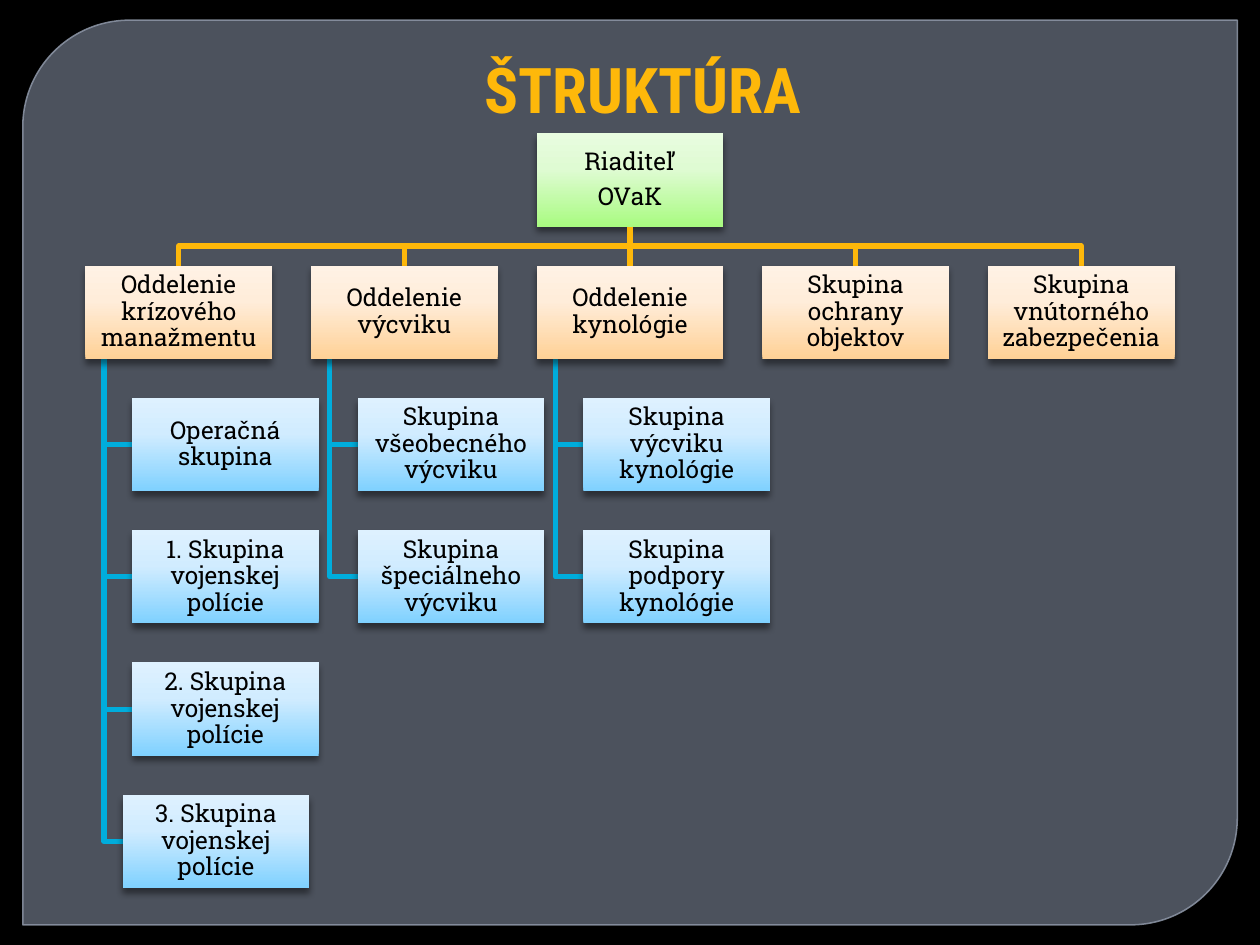
from dataclasses import dataclass

from pptx import Presentation
from pptx.dml.color import RGBColor as RGB
from pptx.enum.shapes import MSO_CONNECTOR as CONN, MSO_SHAPE as SHAPE
from pptx.enum.text import MSO_ANCHOR as ANCHOR, MSO_AUTO_SIZE as FIT, PP_ALIGN as ALIGN
from pptx.oxml import parse_xml as to_xml
from pptx.oxml.ns import nsdecls, qn
from pptx.util import Pt


@dataclass(frozen=True)
class Theme:
    back: str = "000000"
    panel: str = "767F8F"
    edge: str = "8B94A4"
    gold: str = "FEB80A"
    blue: str = "00ADDC"
    ink: str = "000000"
    green_fade: tuple = ("A9FB81", "DFFBD3", "E8FCDF")
    sand_fade: tuple = ("FFD196", "FFEDDA", "FFF2E5")
    sky_fade: tuple = ("7FD1FF", "D1ECFF", "DEF1FF")
    head_font: str = "Roboto Condensed"
    body_font: str = "Roboto Slab"
    head_size: int = 36
    body_size: int = 14


T = Theme()

BOX_W, BOX_H = 106.6, 53.3
STEP_X, STEP_Y = 128.95, 75.6
MID_X, TOP = 360, 76.2
SPINE = BOX_W / 10
INDENT = BOX_W / 4
LAST_INDENT = BOX_W / 5    # the fourth group sits a little further left

ROOT = ["Riaditeľ", "OVaK"]
UNITS = [
    ("Oddelenie krízového manažmentu",
     ["Operačná skupina", "1. Skupina vojenskej polície",
      "2. Skupina vojenskej polície", "3. Skupina vojenskej polície"]),
    ("Oddelenie výcviku",
     ["Skupina všeobecného výcviku", "Skupina špeciálneho výcviku"]),
    ("Oddelenie kynológie",
     ["Skupina výcviku kynológie", "Skupina podpory kynológie"]),
    ("Skupina ochrany objektov", []),
    ("Skupina vnútorného zabezpečenia", []),
]


def col_x(col):
    return MID_X + (col - 2) * STEP_X - BOX_W / 2


def row_y(row):
    return TOP + row * STEP_Y


def indent(row):
    return LAST_INDENT if row == 5 else INDENT


def set_alpha(fill, pct):
    """Make a solid fill partly see-through."""
    color = fill._xPr.find(qn("a:solidFill"))[0]
    color.append(to_xml(f'<a:alpha {nsdecls("a")} val="{pct * 1000}"/>'))


def add_run(para, text, font, size, color, bold=False):
    run = para.add_run()
    run.text = text
    run.font.name, run.font.size, run.font.bold = font, Pt(size), bold
    run.font.color.rgb = RGB.from_string(color)


def add_panel(slide):
    panel = slide.shapes.add_shape(
        SHAPE.ROUND_2_DIAG_RECTANGLE, Pt(13), Pt(11.5), Pt(694), Pt(517))
    panel.adjustments[0], panel.adjustments[1] = 0.118, 0
    panel.shadow.inherit = False
    panel.fill.solid()
    panel.fill.fore_color.rgb = RGB.from_string(T.panel)
    set_alpha(panel.fill, 65)
    panel.line.color.rgb = RGB.from_string(T.edge)
    panel.line.width = Pt(0.87)
    set_alpha(panel.line.fill, 88)


def add_title(slide, text):
    box = slide.shapes.add_textbox(Pt(14.4), Pt(25.2), Pt(705.6), Pt(50.4))
    frame = box.text_frame
    frame.word_wrap, frame.auto_size = True, FIT.SHAPE_TO_FIT_TEXT
    para = frame.paragraphs[0]
    para.alignment = ALIGN.CENTER
    add_run(para, text, T.head_font, T.head_size, T.gold, True)


def add_bend(slide, color, *points):
    """Draw an open line through the points."""
    start, *rest = [(Pt(x), Pt(y)) for x, y in points]
    pen = slide.shapes.build_freeform(*start)
    pen.add_line_segments(rest, close=False)
    line = pen.convert_to_shape()
    line.shadow.inherit = False
    line.fill.background()
    line.line.color.rgb = RGB.from_string(color)
    line.line.width = Pt(3)


def add_link(slide, upper, lower, color):
    """Join the bottom of one box to the top of another."""
    link = slide.shapes.add_connector(CONN.STRAIGHT, 0, 0, 0, 0)
    link.begin_connect(upper, 2)
    link.end_connect(lower, 0)
    link.line.color.rgb = RGB.from_string(color)
    link.line.width = Pt(3)
    link._element.spPr.append(to_xml(f'<a:effectLst {nsdecls("a")}/>'))


def add_fade(box, fade):
    """Give a box an upward gradient and a soft shadow, with no outline."""
    box.line.fill.background()
    stops = "".join(
        f'<a:gs pos="{pos * 1000}"><a:srgbClr val="{color}"/></a:gs>'
        for pos, color in zip((0, 62, 100), fade))
    line = box._element.spPr.find(qn("a:ln"))
    line.addprevious(to_xml(
        f'<a:gradFill {nsdecls("a")}><a:gsLst>{stops}</a:gsLst>'
        '<a:lin ang="16200000" scaled="0"/></a:gradFill>'))
    line.addnext(to_xml(
        f'<a:effectLst {nsdecls("a")}><a:outerShdw blurRad="{Pt(4)}" '
        f'dist="{Pt(3)}" dir="5400000" rotWithShape="0">'
        '<a:srgbClr val="000000"><a:alpha val="43000"/></a:srgbClr>'
        '</a:outerShdw></a:effectLst>'))


def add_box(slide, x, y, lines, fade):
    box = slide.shapes.add_shape(
        SHAPE.RECTANGLE, Pt(x), Pt(y), Pt(BOX_W), Pt(BOX_H))
    add_fade(box, fade)
    frame = box.text_frame
    frame.word_wrap, frame.vertical_anchor = True, ANCHOR.MIDDLE
    frame.margin_left = frame.margin_right = Pt(0.7)
    frame.margin_top = frame.margin_bottom = Pt(0.7)
    for num, text in enumerate(lines):
        para = frame.add_paragraph() if num else frame.paragraphs[0]
        para.alignment, para.line_spacing = ALIGN.CENTER, 0.9
        para.space_after = Pt(4.9)
        add_run(para, text, T.body_font, T.body_size, T.ink)
    return box


def add_lines(slide):
    low, high = row_y(0) + BOX_H, row_y(1)
    bus = (low + high) / 2
    for col, (_, groups) in enumerate(UNITS):
        left = col_x(col)
        mid = left + BOX_W / 2
        if col != 2:
            add_bend(slide, T.gold, (MID_X, low), (MID_X, bus), (mid, bus), (mid, high))
        spine = left + SPINE
        for row in range(2, 2 + len(groups)):
            y = row_y(row) + BOX_H / 2
            add_bend(slide, T.blue, (spine, high + BOX_H), (spine, y),
                     (left + indent(row), y))


def add_chart(slide):
    add_lines(slide)
    root = add_box(slide, col_x(2), row_y(0), ROOT, T.green_fade)
    heads = []
    for col, (name, groups) in enumerate(UNITS):
        left = col_x(col)
        heads.append(add_box(slide, left, row_y(1), [name], T.sand_fade))
        for row, group in enumerate(groups, 2):
            add_box(slide, left + indent(row), row_y(row), [group], T.sky_fade)
    add_link(slide, root, heads[2], T.gold)


def main():
    deck = Presentation()
    deck.slide_width, deck.slide_height = Pt(720), Pt(540)
    slide = deck.slides.add_slide(deck.slide_layouts[6])
    slide.background.fill.solid()
    slide.background.fill.fore_color.rgb = RGB.from_string(T.back)
    add_panel(slide)
    add_title(slide, "ŠTRUKTÚRA")
    add_chart(slide)
    deck.save("out.pptx")


if __name__ == "__main__":
    main()
